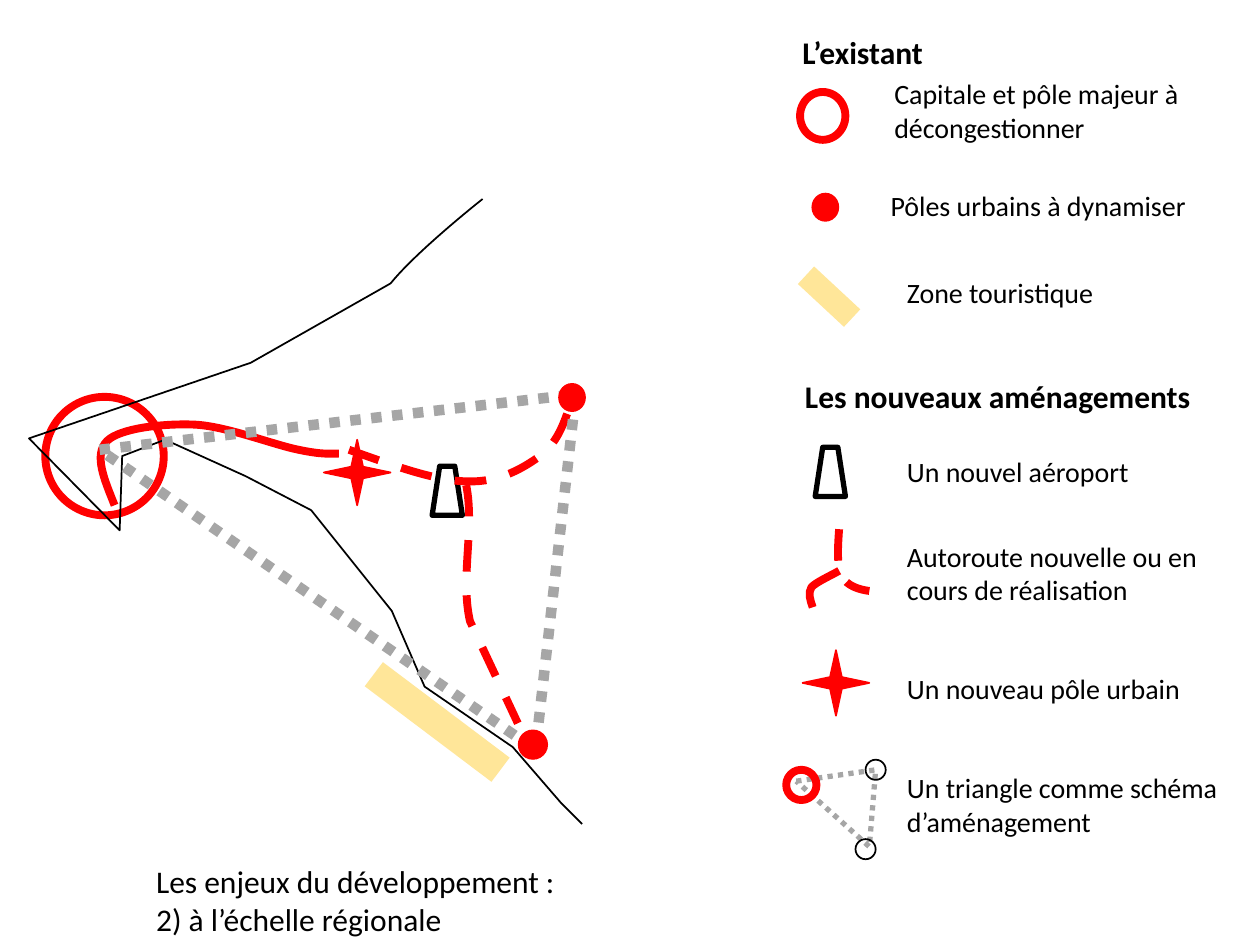
from pptx import Presentation
from pptx.dml.color import RGBColor
from pptx.enum.dml import MSO_LINE
from pptx.enum.shapes import MSO_SHAPE
from pptx.enum.text import MSO_AUTO_SIZE, PP_ALIGN
from pptx.oxml import parse_xml
from pptx.oxml.ns import nsdecls, qn
from pptx.util import Inches, Pt

DASH = MSO_LINE.DASH
DOT = MSO_LINE.ROUND_DOT
ELLIPSE = MSO_SHAPE.OVAL
RECT = MSO_SHAPE.RECTANGLE
STAR = MSO_SHAPE.STAR_4_POINT
TRAPEZOID = MSO_SHAPE.TRAPEZOID

FONT = "Calibri"
COLORS = {"red": "FF0000", "black": "000000", "grey": "A6A6A6", "sand": "FFE699"}
LABEL_X, LABEL_W = 7.1, 2.9

# Path steps: (x, y) is a line, (x1, y1, x2, y2, x, y) is a Bézier curve.
COAST = [(4.62, 6.54), (4.45, 6.37), (4.07, 5.93), (3.37, 5.45), (3.11, 4.85),
         (2.47, 4.05), (1.95, 3.78), (1.31, 3.49), (0.97, 3.62), (0.95, 4.21),
         (0.23, 3.48), (1.99, 2.88), (3.1, 2.25),
         (3.31, 1.99, 3.83, 1.58, 3.83, 1.58)]
ROAD_WEST = [(0.91, 4.01), (0.83, 3.81, 0.74, 3.61, 0.85, 3.5),
             (0.95, 3.4, 1.29, 3.36, 1.54, 3.37),
             (1.79, 3.38, 2.17, 3.53, 2.37, 3.57),
             (2.56, 3.61, 2.62, 3.6, 2.69, 3.6)]
ROAD_EAST = [(2.77, 3.57), (3.11, 3.69, 3.46, 3.82, 3.71, 3.82),
             (3.97, 3.83, 4.16, 3.71, 4.3, 3.61),
             (4.43, 3.5, 4.48, 3.35, 4.53, 3.2)]
ROAD_SOUTH = [(3.7, 3.85), (3.77, 4.2, 3.65, 4.58, 3.73, 4.93), (4.11, 5.74)]
KEY_ROAD_PLANNED = [(6.66, 4.2), (6.65, 4.34, 6.64, 4.49, 6.68, 4.57),
                    (6.72, 4.65, 6.82, 4.68, 6.9, 4.69)]
KEY_ROAD_BUILT = [(6.45, 4.82), (6.43, 4.76, 6.41, 4.71, 6.44, 4.66),
                  (6.48, 4.62, 6.57, 4.58, 6.66, 4.53)]
TRIANGLE = [(0.79, 3.57), (4.57, 3.13), (4.25, 5.95)]
KEY_TRIANGLE = [(6.32, 6.2), (6.95, 6.11), (6.9, 6.72)]


def rgb(name):
    return RGBColor.from_string(COLORS[name])


def style(sp, fill=None, line=None, width=1, dash=None):
    sp.shadow.inherit = False
    if fill:
        sp.fill.solid()
        sp.fill.fore_color.rgb = rgb(fill)
    else:
        sp.fill.background()
    if line:
        sp.line.color.rgb = rgb(line)
        sp.line.width = Pt(width)
        if dash:
            sp.line.dash_style = dash
    else:
        sp.line.fill.background()


def add_symbol(shapes, kind, x, y, w, h, rotation=0, **look):
    sp = shapes.add_shape(kind, Inches(x), Inches(y), Inches(w), Inches(h))
    sp.rotation = rotation
    style(sp, **look)


def add_path(shapes, steps, line, width, dash=None, close=False):
    """Draw an outline through the steps, turning curve steps into Béziers."""
    ends = [(Inches(s[-2]), Inches(s[-1])) for s in steps]
    builder = shapes.build_freeform(*ends[0], scale=1.0)
    builder.add_line_segments(ends[1:], close=close)
    sp = builder.convert_to_shape()
    left, top = min(x for x, _ in ends), min(y for _, y in ends)
    segments = list(sp._element.iter(qn("a:lnTo")))
    for segment, step in zip(segments, steps[1:]):
        if len(step) == 6:
            segment.tag = qn("a:cubicBezTo")
            for i in (0, 1):
                x, y = Inches(step[2 * i]) - left, Inches(step[2 * i + 1]) - top
                segment.insert(i, parse_xml(f'<a:pt {nsdecls("a")} x="{x}" y="{y}"/>'))
    style(sp, line=line, width=width, dash=dash)


def add_text(shapes, text, x, y, w, h, size=16, bold=False, wrap=True):
    tf = shapes.add_textbox(Inches(x), Inches(y), Inches(w), Inches(h)).text_frame
    tf.word_wrap = wrap
    tf.auto_size = MSO_AUTO_SIZE.SHAPE_TO_FIT_TEXT
    p = tf.paragraphs[0]
    p.alignment = PP_ALIGN.LEFT
    r = p.add_run()
    r.text = text
    r.font.name = FONT
    r.font.size = Pt(size)
    r.font.bold = bold
    r.font.color.rgb = rgb("black")


def add_star(shapes, x, y):
    add_symbol(shapes, STAR, x, y, 0.53, 0.52, fill="red", line="red")


def add_airport(shapes, x, y):
    add_symbol(shapes, TRAPEZOID, x, y, 0.24, 0.39, line="black", width=3)


def add_map(shapes):
    add_star(shapes, 2.57, 3.49)
    add_airport(shapes, 3.43, 3.7)
    add_path(shapes, ROAD_WEST, "red", 4.5)
    add_symbol(shapes, ELLIPSE, 0.36, 3.15, 0.94, 0.94, line="red", width=4.5)
    for road in (ROAD_EAST, ROAD_SOUTH):
        add_path(shapes, road, "red", 4.5, DASH)
    add_path(shapes, COAST, "black", 1)
    add_path(shapes, TRIANGLE, "grey", 6, DOT, close=True)
    add_symbol(shapes, ELLIPSE, 4.43, 3.04, 0.22, 0.23, fill="red")
    add_symbol(shapes, ELLIPSE, 4.11, 5.79, 0.24, 0.24, fill="red")
    add_symbol(shapes, RECT, 2.84, 5.61, 1.26, 0.24, rotation=37, fill="sand")


def add_legend_symbols(shapes):
    add_symbol(shapes, ELLIPSE, 6.35, 0.73, 0.36, 0.38, line="red", width=4.5)
    add_symbol(shapes, ELLIPSE, 6.44, 1.53, 0.22, 0.23, fill="red")
    add_symbol(shapes, RECT, 6.33, 2.26, 0.5, 0.19, rotation=42.9, fill="sand")
    add_airport(shapes, 6.47, 3.55)
    add_path(shapes, KEY_ROAD_PLANNED, "red", 4.5, DASH)
    add_path(shapes, KEY_ROAD_BUILT, "red", 4.5)
    add_star(shapes, 6.37, 5.16)

    group = shapes.add_group_shape().shapes
    add_path(group, KEY_TRIANGLE, "grey", 3, DOT, close=True)
    for x, y in ((6.87, 6.03), (6.79, 6.66)):
        add_symbol(group, ELLIPSE, x, y, 0.16, 0.16, line="black")
    add_symbol(group, ELLIPSE, 6.24, 6.11, 0.24, 0.24, line="red", width=4.5)


def add_legend_texts(shapes):
    add_text(shapes, "L’existant", 6.27, 0.21, 1.17, 0.4, 18, True, wrap=False)
    add_text(shapes, "Les nouveaux aménagements", 6.29, 2.94, 3.28, 0.4, 18, True,
             wrap=False)
    add_text(shapes, "Capitale et pôle majeur à décongestionner", 7, 0.56, 2.66, 0.64)
    add_text(shapes, "Pôles urbains à dynamiser", 6.97, 1.45, LABEL_W, 0.37)
    for text, y, h in (
        ("Zone touristique", 2.14, 0.37),
        ("Un nouvel aéroport", 3.56, 0.37),
        ("Autoroute nouvelle ou en cours de réalisation", 4.23, 0.64),
        ("Un nouveau pôle urbain", 5.28, 0.37),
        ("Un triangle comme schéma d’aménagement", 6.07, 0.64),
    ):
        add_text(shapes, text, LABEL_X, y, LABEL_W, h)


def main():
    prs = Presentation()
    prs.slide_width, prs.slide_height = Inches(10), Inches(7.5)
    shapes = prs.slides.add_slide(prs.slide_layouts[6]).shapes
    add_map(shapes)
    add_legend_symbols(shapes)
    add_legend_texts(shapes)
    add_text(shapes, "Les enjeux du développement : 2) à l’échelle régionale",
             1.14, 6.79, 3.52, 0.71, 18)
    prs.save("out.pptx")


if __name__ == "__main__":
    main()
